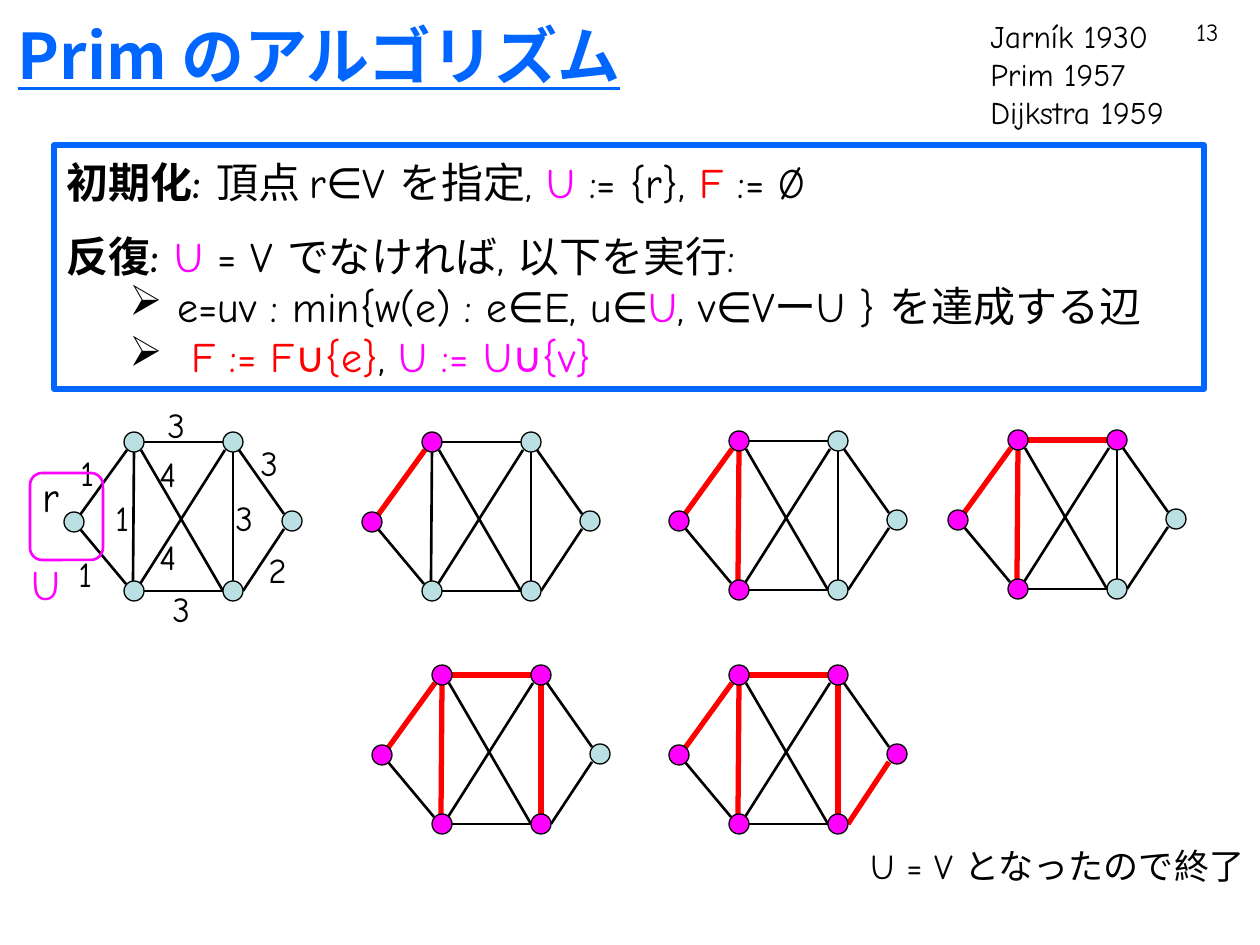
from lxml.etree import SubElement
from pptx import Presentation
from pptx.dml.color import RGBColor
from pptx.enum.shapes import MSO_CONNECTOR as Connector, MSO_SHAPE as Shape
from pptx.enum.text import MSO_ANCHOR as Anchor, MSO_AUTO_SIZE as AutoSize, PP_ALIGN as Align
from pptx.oxml import parse_xml
from pptx.oxml.ns import nsdecls, qn
from pptx.util import Pt

SCALE = 914400 / 126
LATIN, JAPANESE = "Comic Neue", "Noto Sans CJK JP"
BLACK, BLUE, RED, PINK, PALE = "000000", "0066FF", "FF0000", "FF00FF", "BBE0E3"

NODE_SIZE = 20
NODES = {
    "left": (0, 80), "upper left": (60, 0), "upper right": (159, 0),
    "lower left": (60, 149), "lower right": (159, 149), "right": (218, 79),
}
EDGES = {
    ("left", "upper left"): (16, 83, 63, 18),
    ("left", "lower left"): (16, 97, 62, 152),
    ("upper left", "upper right"): (79, 10, 159, 10),
    ("lower left", "lower right"): (79, 159, 159, 159),
    ("lower right", "right"): (179, 159, 220, 97),
    ("upper right", "right"): (175, 18, 220, 82),
    ("upper left", "lower right"): (77, 18, 159, 159),
    ("upper right", "lower left"): (161, 18, 76, 152),
    ("upper left", "lower left"): (70, 20, 69, 149),
    ("upper right", "lower right"): (169, 20, 169, 149),
}
TREE = [
    ("left", "upper left"), ("upper left", "lower left"),
    ("upper left", "upper right"), ("upper right", "lower right"),
    ("lower right", "right"),
]
STEPS = [(64, 432), (362, 432), (669, 431), (948, 430), (372, 665), (669, 665)]
WEIGHTS = [
    ("1", 68, 445), ("1", 66, 546), ("3", 155, 397), ("3", 160, 581),
    ("4", 147, 529), ("4", 147, 446), ("3", 248, 435), ("2", 256, 542),
    ("1", 103, 490), ("3", 223, 490),
]


def px(*lengths):
    return [round(length * SCALE) for length in lengths]


def color(value):
    return RGBColor.from_string(value)


class Board:
    def __init__(self, page):
        self.page = page

    def style(self, para, size, tint=BLACK, latin=LATIN):
        font = para.font
        font.size, font.name = Pt(size), latin
        font.color.rgb = color(tint)
        defaults = para._p.pPr.find(qn("a:defRPr"))
        SubElement(defaults, qn("a:ea"), typeface=JAPANESE)

    def title(self, text, area):
        box = self.page.shapes.title
        box.left, box.top, box.width, box.height = px(*area)
        frame = box.text_frame
        frame.text = text
        frame.word_wrap = False
        frame.auto_size = AutoSize.NONE
        frame.vertical_anchor = Anchor.MIDDLE
        para = frame.paragraphs[0]
        para.alignment = Align.LEFT
        self.style(para, 36, BLUE, JAPANESE)
        para.font.bold = para.font.underline = True

    def text(self, area, lines, size, tint=BLACK, wrap=False, align=Align.LEFT):
        frame = self.page.shapes.add_textbox(*px(*area)).text_frame
        frame.word_wrap = wrap
        frame.auto_size = AutoSize.NONE if wrap else AutoSize.SHAPE_TO_FIT_TEXT
        for index, line in enumerate(lines):
            para = frame.paragraphs[0] if index == 0 else frame.add_paragraph()
            para.alignment = align
            self.style(para, size, tint)
            for words, *looks in [(line,)] if isinstance(line, str) else line:
                span = para.add_run()
                span.text = words
                for look in looks:
                    if look == "bold":
                        span.font.bold = True
                    else:
                        span.font.color.rgb = color(look)
        return frame

    def bullet(self, para):
        para.level = 1
        props = para._p.get_or_add_pPr()
        margin, indent = px(111, -48)
        props.set("marL", str(margin))
        props.set("indent", str(indent))
        props.insert(0, parse_xml(f'<a:buChar {nsdecls("a")} char="➢"/>'))

    def shape(self, kind, area, line, width, fill=None, shapes=None):
        item = (shapes or self.page.shapes).add_shape(kind, *px(*area))
        item.shadow.inherit = False
        if fill:
            item.fill.solid()
            item.fill.fore_color.rgb = color(fill)
        else:
            item.fill.background()
        item.line.color.rgb = color(line)
        item.line.width = Pt(width)

    def line(self, shapes, ends, tint, width):
        item = shapes.add_connector(Connector.STRAIGHT, *px(*ends))
        item.line.color.rgb = color(tint)
        item.line.width = Pt(width)
        SubElement(item._element.spPr, qn("a:effectLst"))

    def graph(self, left, top, chosen):
        shapes = self.page.shapes.add_group_shape().shapes
        reached = {node for edge in chosen for node in edge}
        for node, (x, y) in NODES.items():
            area = (left + x, top + y, NODE_SIZE, NODE_SIZE)
            fill = PINK if node in reached else PALE
            self.shape(Shape.OVAL, area, BLACK, 0.75, fill, shapes)
        for edge, (x1, y1, x2, y2) in EDGES.items():
            ends = (left + x1, top + y1, left + x2, top + y2)
            tint, width = (RED, 3) if edge in chosen else (BLACK, 1.5)
            self.line(shapes, ends, tint, width)


def main():
    deck = Presentation()
    deck.slide_width, deck.slide_height = px(1260, 945)
    board = Board(deck.slides.add_slide(deck.slide_layouts[5]))

    board.title("Prim のアルゴリズム", (5, 6, 825, 96))
    board.text((937, 11, 294, 66), ["13"], 14, wrap=True, align=Align.RIGHT)
    board.text((54, 150, 828, 63), [
        [("初期化: ", "bold"), ("頂点 r∈V を指定, ",), ("U", PINK),
         (" := {r}, ",), ("F", RED), (" := Ø",)],
    ], 24)
    loop = board.text((54, 224, 1160, 165), [
        [("反復: ", "bold"), ("U", PINK), (" = V でなければ, 以下を実行:",)],
        [("e=uv : min{w(e) : e∈E, u∈",), ("U", PINK), (", v∈VーU } を達成する辺",)],
        [(" ",), ("F := F∪{e}", RED), (", ",), ("U := U∪{v}", PINK)],
    ], 24)
    for para in loop.paragraphs[1:]:
        board.bullet(para)
    board.shape(Shape.RECTANGLE, (54, 145, 1150, 244), BLUE, 3)

    for count, (left, top) in enumerate(STEPS):
        board.graph(left, top, TREE[:count])
    for weight, x, y in WEIGHTS:
        board.text((x, y, 42 if weight == "1" else 47, 55), [weight], 20)

    board.text((30, 464, 45, 63), ["r"], 24)
    board.shape(Shape.ROUNDED_RECTANGLE, (30, 473, 73, 87), PINK, 1.5)
    board.text((19, 552, 57, 63), ["U"], 24, PINK)
    board.text((858, 838, 407, 55), ["U = V となったので終了"], 20)
    board.text((978, 11, 232, 127), ["Jarník 1930", "Prim 1957", "Dijkstra 1959"], 18, wrap=True)
    deck.save("out.pptx")


if __name__ == "__main__":
    main()
